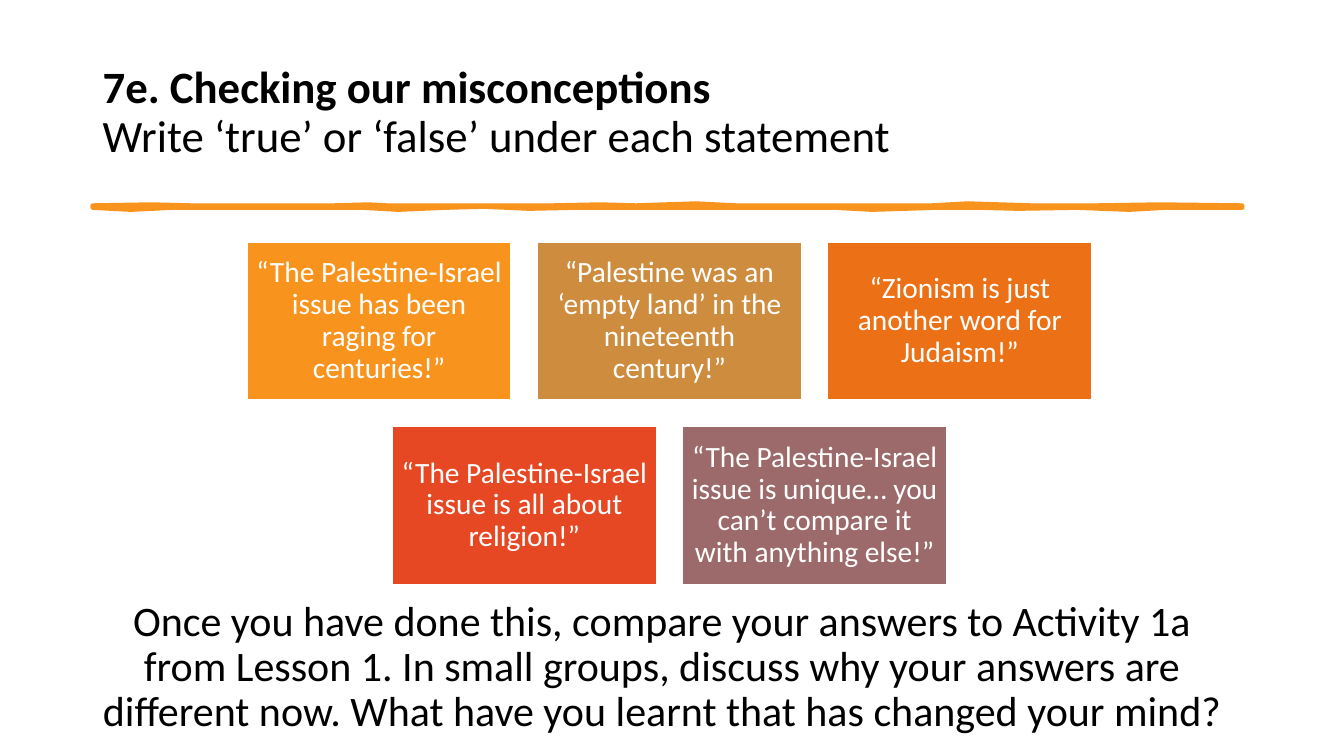
import pptx
import pptx.util
import pptx.dml.color
import pptx.enum.shapes
import pptx.enum.text
from pptx.util import Inches

# Content
FONT = "Calibri"
TITLE = "7e. Checking our misconceptions"
SUBTITLE = "Write ‘true’ or ‘false’ under each statement"
STATEMENT_ROWS = [
    [
        ("“The Palestine-Israel issue has been raging for centuries!”", "F8931D"),
        ("“Palestine was an ‘empty land’ in the nineteenth century!”", "CE8D3E"),
        ("“Zionism is just another word for Judaism!”", "EC7016"),
    ],
    [
        ("“The Palestine-Israel issue is all about religion!”", "E64823"),
        ("“The Palestine-Israel issue is unique… you can’t compare it "
         "with anything else!”", "9C6A6A"),
    ],
]
FOLLOW_UP = (
    "Once you have done this, compare your answers to Activity 1a from Lesson 1. "
    "In small groups, discuss why your answers are different now. "
    "What have you learnt that has changed your mind?"
)

# Hand-drawn rule: x and y along its upper and lower edges
RULE_TOP = [
    (0.92, 2.04), (1.5, 2.03), (1.9, 2.04), (2.44, 2.04), (3.31, 2.04),
    (3.65, 2.03), (3.84, 2.04), (4.6, 2.04), (5.48, 2.04), (5.95, 2.03),
    (6.31, 2.04), (6.9, 2.02), (7.3, 2.04), (8.06, 2.04), (8.48, 2.04),
    (9.24, 2.04), (9.6, 2.02), (10.23, 2.04), (10.87, 2.04), (11.5, 2.03),
    (12.32, 2.04),
]
RULE_BOTTOM = [
    (12.32, 2.06), (11.56, 2.06), (11.2, 2.08), (10.68, 2.06), (10.1, 2.07),
    (9.73, 2.06), (9.28, 2.06), (8.65, 2.08), (8.29, 2.06), (7.53, 2.06),
    (7.11, 2.06), (6.35, 2.06), (5.7, 2.06), (5.25, 2.07), (4.8, 2.05),
    (4.41, 2.06), (3.95, 2.08), (3.6, 2.06), (2.89, 2.06), (2.13, 2.06),
    (1.71, 2.06), (1.3, 2.08), (0.92, 2.06),
]

# Card grid
CARD_WIDTH, CARD_HEIGHT, GAP = 2.62, 1.57, 0.26
GRID_CENTRE, GRID_TOP = 6.64, 2.4
CARD_INSET = 0.09


def colour(hex_string):
    return pptx.dml.color.RGBColor.from_string(hex_string)


def paint(shape, fill, line, line_width):
    shape.shadow.inherit = False
    shape.fill.solid()
    shape.fill.fore_color.rgb = colour(fill)
    shape.line.color.rgb = colour(line)
    shape.line.width = pptx.util.Pt(line_width)


def write(shape, text, size, text_colour, centred=True):
    frame = shape.text_frame
    frame.word_wrap = True
    frame.vertical_anchor = pptx.enum.text.MSO_ANCHOR.MIDDLE
    paragraph = frame.paragraphs[0]
    paragraph.text = text
    alignment = pptx.enum.text.PP_ALIGN
    paragraph.alignment = alignment.CENTER if centred else alignment.LEFT
    paragraph.line_spacing = 0.9
    paragraph.font.name = FONT
    paragraph.font.size = pptx.util.Pt(size)
    paragraph.font.color.rgb = colour(text_colour)
    return paragraph


def add_text(slide, left, top, width, height):
    return slide.shapes.add_textbox(
        Inches(left), Inches(top), Inches(width), Inches(height))


def add_rule(slide):
    points = [(Inches(x), Inches(y)) for x, y in RULE_TOP + RULE_BOTTOM]
    builder = slide.shapes.build_freeform(*points[0])
    builder.add_line_segments(points[1:], close=True)
    paint(builder.convert_to_shape(), "F8931D", "F8931D", 3.25)


def add_card(slide, left, top, text, fill):
    card = slide.shapes.add_shape(
        pptx.enum.shapes.MSO_SHAPE.RECTANGLE,
        Inches(left), Inches(top), Inches(CARD_WIDTH), Inches(CARD_HEIGHT))
    paint(card, fill, "FFFFFF", 1)
    frame = card.text_frame
    frame.margin_left = frame.margin_right = Inches(CARD_INSET)
    frame.margin_top = frame.margin_bottom = Inches(CARD_INSET)
    write(card, text, 21, "FFFFFF")


def main():
    presentation = pptx.Presentation()
    presentation.slide_width = Inches(13.33)
    presentation.slide_height = Inches(7.5)
    slide = presentation.slides.add_slide(presentation.slide_layouts[6])

    # Title and rule
    title_box = add_text(slide, 0.92, 0.4, 11.5, 1.45)
    title = write(title_box, TITLE + "\v" + SUBTITLE, 32, "000000", centred=False)
    title.runs[0].font.bold = True
    add_rule(slide)

    # Statement cards, each row centred
    for row, statements in enumerate(STATEMENT_ROWS):
        row_width = len(statements) * (CARD_WIDTH + GAP) - GAP
        top = GRID_TOP + row * (CARD_HEIGHT + GAP)
        for column, (text, fill) in enumerate(statements):
            left = GRID_CENTRE - row_width / 2 + column * (CARD_WIDTH + GAP)
            add_card(slide, left, top, text, fill)

    # Follow-up task
    write(add_text(slide, 0.82, 5.9, 11.5, 1.45), FOLLOW_UP, 30, "000000")

    presentation.save("out.pptx")


if __name__ == "__main__":
    main()
